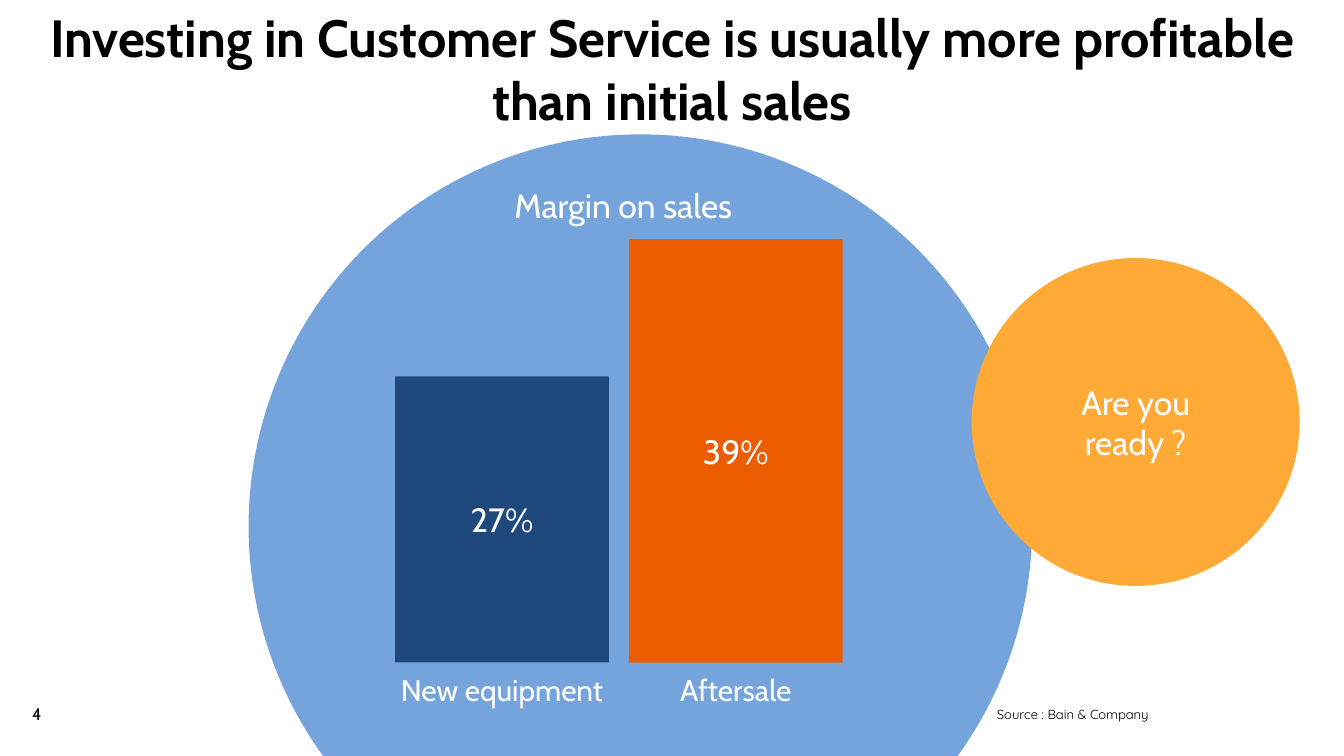
from dataclasses import dataclass

from pptx import Presentation
from pptx.dml.color import RGBColor
from pptx.enum.shapes import MSO_SHAPE
from pptx.enum.text import MSO_ANCHOR, PP_ALIGN
from pptx.shapes.base import BaseShape
from pptx.slide import Slide
from pptx.util import Inches, Length, Pt

OVAL, RECTANGLE = MSO_SHAPE.OVAL, MSO_SHAPE.RECTANGLE
LEFT, CENTER = PP_ALIGN.LEFT, PP_ALIGN.CENTER
TOP, MIDDLE = MSO_ANCHOR.TOP, MSO_ANCHOR.MIDDLE

COLORS = {
    "black": "000000",
    "white": "FFFFFF",
    "sky": "75A4DD",
    "navy": "1F497D",
    "orange": "EB5D00",
    "amber": "FFA937",
}

# The slide is a grid of square cells, 100 columns by 56.25 rows.
COLUMNS, ROWS = 100, 56.25
CELL = 0.1

BASELINE = 49.3
BAR_LEFT, BAR_WIDTH, BAR_PITCH = 29.4, 15.9, 17.4
LABEL_WIDTH = 22.5


@dataclass(frozen=True)
class Area:
    left: float
    top: float
    width: float
    height: float


@dataclass(frozen=True)
class Bar:
    label: str
    value: str
    rows: float
    color: str


BARS = [
    Bar("New equipment", "27%", 21.3, "navy"),
    Bar("Aftersale", "39%", 31.5, "orange"),
]


def cells(count: float) -> Length:
    return Inches(count * CELL)


def write(box: BaseShape, text: str, *, size: float, color: str = "white",
          font: str = "Cabin", bold: bool = False, align: PP_ALIGN = CENTER,
          anchor: MSO_ANCHOR = TOP, wrap: bool = True) -> None:
    """Fill a shape or text box, one paragraph for each line of text."""
    frame = box.text_frame
    frame.text = text
    frame.word_wrap = wrap
    frame.vertical_anchor = anchor
    for para in frame.paragraphs:
        para.alignment = align
        para.font.name = font
        para.font.size = Pt(size)
        para.font.bold = bold
        para.font.color.rgb = RGBColor.from_string(COLORS[color])


def add_figure(slide: Slide, kind: MSO_SHAPE, area: Area, color: str) -> BaseShape:
    """Add a plain filled shape without line or shadow."""
    figure = slide.shapes.add_shape(
        kind, cells(area.left), cells(area.top), cells(area.width), cells(area.height))
    figure.shadow.inherit = False
    figure.fill.solid()
    figure.fill.fore_color.rgb = RGBColor.from_string(COLORS[color])
    figure.line.fill.background()
    return figure


def add_text(slide: Slide, area: Area, text: str, **text_format) -> None:
    box = slide.shapes.add_textbox(
        cells(area.left), cells(area.top), cells(area.width), cells(area.height))
    write(box, text, **text_format)


def add_bar(slide: Slide, bar: Bar, index: int) -> None:
    left = BAR_LEFT + index * BAR_PITCH
    area = Area(left, BASELINE - bar.rows, BAR_WIDTH, bar.rows)
    column = add_figure(slide, RECTANGLE, area, bar.color)
    write(column, bar.value, size=18, anchor=MIDDLE)
    label_left = left + (BAR_WIDTH - LABEL_WIDTH) / 2
    add_text(slide, Area(label_left, BASELINE + 0.2, LABEL_WIDTH, 3.7),
             bar.label, size=16)


def main() -> None:
    deck = Presentation()
    deck.slide_width, deck.slide_height = cells(COLUMNS), cells(ROWS)
    slide = deck.slides.add_slide(deck.slide_layouts[6])

    add_text(slide, Area(1.4, 51.9, 4.7, 2.5), "4",
             size=9, color="black", align=LEFT)
    add_figure(slide, OVAL, Area(18.5, 10, 58.3, 58.3), "sky")
    add_text(slide, Area(37.3, 13.3, 18.6, 4), "Margin on sales",
             size=18, align=LEFT, wrap=False)
    add_text(slide, Area(0, -0.1, COLUMNS, 7.2),
             "Investing in Customer Service is usually more profitable than initial sales",
             size=28, color="black", bold=True)

    for index, bar in enumerate(BARS):
        add_bar(slide, bar, index)

    add_text(slide, Area(73.2, 52.1, 14.3, 2.2), "Source : Bain & Company",
             size=7, color="black", font="Quicksand", align=LEFT, wrap=False)
    question = add_figure(slide, OVAL, Area(72.3, 19.2, 24.4, 24.4), "amber")
    write(question, "Are you\nready ?", size=18, anchor=MIDDLE)

    deck.save("out.pptx")


if __name__ == "__main__":
    main()
